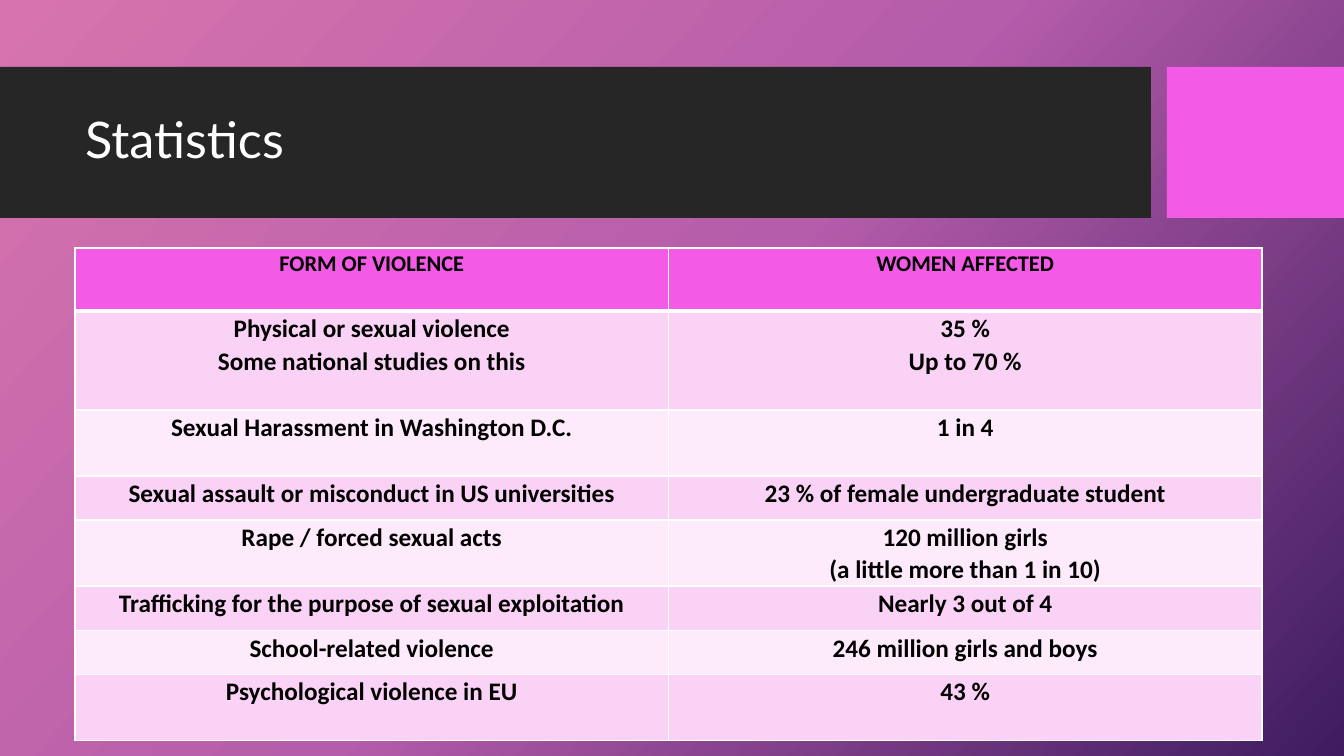
from copy import deepcopy

from lxml import etree
from pptx import Presentation
from pptx.dml.color import RGBColor
from pptx.enum.shapes import MSO_SHAPE
from pptx.enum.text import MSO_ANCHOR, PP_ALIGN
from pptx.oxml.ns import qn
from pptx.util import Emu, Pt

RECTANGLE = MSO_SHAPE.RECTANGLE
MIDDLE = MSO_ANCHOR.MIDDLE
LEFT, CENTER = PP_ALIGN.LEFT, PP_ALIGN.CENTER

WHITE = RGBColor(0xFF, 0xFF, 0xFF)
BLACK = RGBColor(0x00, 0x00, 0x00)
CHARCOAL = RGBColor(0x26, 0x26, 0x26)
MAGENTA = RGBColor(0xF3, 0x5A, 0xE6)
BAND_DARK = RGBColor(0xFA, 0xD2, 0xF5)
BAND_LIGHT = RGBColor(0xFD, 0xEA, 0xFA)
BACKDROP = [
    (0, RGBColor(0xD7, 0x74, 0xAD)),
    (0.5, RGBColor(0xB5, 0x5C, 0xAB)),
    (1, RGBColor(0x3E, 0x1C, 0x5F)),
]

EMU_PER_PX = 914400 / 100.8

# Row height in px, form of violence, women affected
STATISTICS = [
    (63, ["FORM OF VIOLENCE"], ["WOMEN AFFECTED"]),
    (99, ["Physical or sexual violence", "Some national studies on this"],
     ["35 %", "Up to 70 %"]),
    (66, ["Sexual Harassment in Washington D.C."], ["1 in 4"]),
    (44, ["Sexual assault or misconduct in US universities"],
     ["23 % of female undergraduate student"]),
    (66, ["Rape / forced sexual acts"],
     ["120 million girls", "(a little more than 1 in 10)"]),
    (45, ["Trafficking for the purpose of sexual exploitation"],
     ["Nearly 3 out of 4"]),
    (44, ["School-related violence"], ["246 million girls and boys"]),
    (66, ["Psychological violence in EU"], ["43 %"]),
]


def px(length):
    return Emu(round(length * EMU_PER_PX))


def paint_background(slide):
    fill = slide.background.fill
    fill.gradient()
    fill.gradient_angle = 360 - 42
    stop_list = fill.gradient_stops
    stops_xml = slide.element.find(".//" + qn("a:gsLst"))
    stops_xml.append(deepcopy(stops_xml[-1]))
    stop_list = fill.gradient_stops
    for stop, (position, color) in zip(stop_list, BACKDROP):
        stop.position = position
        stop.color.rgb = color


def add_block(slide, left, top, width, height, color):
    block = slide.shapes.add_shape(
        RECTANGLE, px(left), px(top), px(width), px(height))
    block.shadow.inherit = False
    block.fill.solid()
    block.fill.fore_color.rgb = color
    block.line.fill.background()


def set_title(slide, text):
    title = slide.shapes.title
    title.left, title.top = px(75), px(83)
    title.width, title.height = px(1059), px(119)
    # Bring the title in front of the band
    slide.shapes.element.append(title.element)
    frame = title.text_frame
    frame.text = text
    frame.word_wrap = True
    frame.vertical_anchor = MIDDLE
    heading = frame.paragraphs[0]
    heading.alignment = LEFT
    heading.line_spacing = 0.9
    heading.font.name = "Lato"
    heading.font.size = Pt(36)
    heading.font.color.rgb = WHITE


def set_borders(cell, top, bottom):
    properties = cell._tc.get_or_add_tcPr()
    sides = [("a:lnL", 1), ("a:lnR", 1), ("a:lnT", top), ("a:lnB", bottom)]
    for index, (tag, points) in enumerate(sides):
        border = etree.Element(qn(tag), w=str(Pt(points)))
        solid = etree.SubElement(border, qn("a:solidFill"))
        etree.SubElement(solid, qn("a:srgbClr"), val=str(WHITE))
        properties.insert(index, border)


def fill_cell(cell, lines, size, color):
    cell.fill.solid()
    cell.fill.fore_color.rgb = color
    cell.margin_left = cell.margin_right = px(7)
    cell.margin_top = cell.margin_bottom = 0
    cell.text = "\n".join(lines)
    for paragraph in cell.text_frame.paragraphs:
        paragraph.alignment = CENTER
        paragraph.line_spacing = 1.07
        paragraph.font.name = "Calibri"
        paragraph.font.size = Pt(size)
        paragraph.font.bold = True
        paragraph.font.color.rgb = BLACK


def add_statistics(slide, left, top, width):
    height = sum(row[0] for row in STATISTICS)
    table = slide.shapes.add_table(
        len(STATISTICS), 2, px(left), px(top), px(width), px(height)).table
    for row, (row_height, *texts) in enumerate(STATISTICS):
        table.rows[row].height = px(row_height)
        if row == 0:
            size, color = 16, MAGENTA
        else:
            size, color = 18, BAND_DARK if row % 2 else BAND_LIGHT
        for column, lines in enumerate(texts):
            cell = table.cell(row, column)
            fill_cell(cell, lines, size, color)
            # A thick rule parts the header from the body
            set_borders(cell, 3 if row == 1 else 1, 3 if row == 0 else 1)


def main():
    deck = Presentation()
    deck.slide_width, deck.slide_height = px(1344), px(756)
    slide = deck.slides.add_slide(deck.slide_layouts[5])
    paint_background(slide)

    # Title band and accent block
    add_block(slide, 0, 67, 1151, 151, CHARCOAL)
    add_block(slide, 1167, 67, 177, 151, MAGENTA)
    set_title(slide, "Statistics")

    # Table of figures
    add_statistics(slide, 75, 248, 1187)
    deck.save("out.pptx")


if __name__ == "__main__":
    main()
